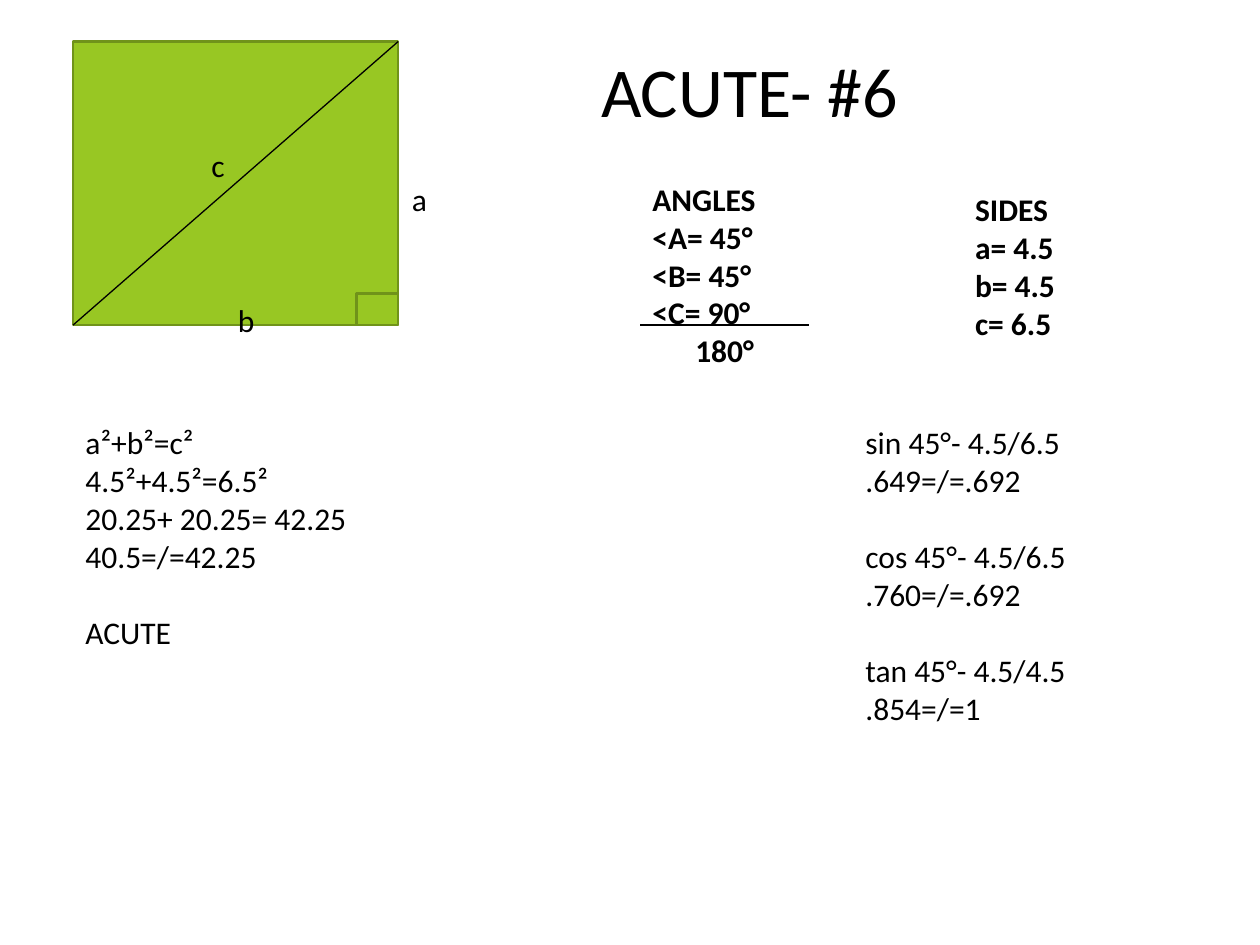
"""Build the slide that checks the triangle cut from a square in problem 6."""
from lxml.etree import SubElement
from pptx import Presentation
from pptx.dml.color import RGBColor
from pptx.enum.shapes import MSO_CONNECTOR as Connector, MSO_SHAPE as Preset
from pptx.enum.text import MSO_ANCHOR as Anchor, MSO_AUTO_SIZE as AutoSize, PP_ALIGN as Align
from pptx.oxml.ns import qn
from pptx.util import Inches, Pt


def color(value):
    return RGBColor.from_string(value)


class WorkSheet:
    font_name = "Calibri"
    ink = "000000"
    green = "98C723"
    dark_green = "70931A"
    body_size = 18
    title_size = 40

    def __init__(self, slide):
        self.slide = slide

    def style(self, paragraph, size, bold=False):
        paragraph.alignment = Align.LEFT
        paragraph.font.name = self.font_name
        paragraph.font.size = Pt(size)
        paragraph.font.bold = bold
        paragraph.font.color.rgb = color(self.ink)

    def title(self, wording, left, top, width, height):
        heading = self.slide.shapes.title
        heading.left, heading.top = Inches(left), Inches(top)
        heading.width, heading.height = Inches(width), Inches(height)
        frame = heading.text_frame
        frame.text = wording
        frame.auto_size = AutoSize.NONE
        frame.vertical_anchor = Anchor.TOP
        self.style(frame.paragraphs[0], self.title_size)

    def rectangle(self, left, top, width, height):
        figure = self.slide.shapes.add_shape(
            Preset.RECTANGLE, Inches(left), Inches(top), Inches(width), Inches(height))
        figure.shadow.inherit = False
        figure.fill.solid()
        figure.fill.fore_color.rgb = color(self.green)
        figure.line.color.rgb = color(self.dark_green)
        figure.line.width = Pt(1.25)

    def line(self, x1, y1, x2, y2):
        stroke = self.slide.shapes.add_connector(
            Connector.STRAIGHT, Inches(x1), Inches(y1), Inches(x2), Inches(y2))
        stroke.line.color.rgb = color(self.ink)
        stroke.line.width = Pt(0.75)
        SubElement(stroke._element.spPr, qn("a:effectLst"))

    def text(self, groups, left, top, width, height, bold=False):
        """Write groups of lines, one blank line's height apart, and return the paragraphs."""
        frame = self.slide.shapes.add_textbox(
            Inches(left), Inches(top), Inches(width), Inches(height)).text_frame
        frame.word_wrap = True
        lines = [(wording, index > 0 and position == 0)
                 for index, group in enumerate(groups)
                 for position, wording in enumerate(group)]
        for number, (wording, starts_group) in enumerate(lines):
            paragraph = frame.add_paragraph() if number else frame.paragraphs[0]
            paragraph.text = wording
            if starts_group:
                paragraph.space_before = Pt(22)
            self.style(paragraph, self.body_size, bold)
        return frame.paragraphs


def main():
    deck = Presentation()
    deck.slide_width, deck.slide_height = Inches(10), Inches(7.5)
    sheet = WorkSheet(deck.slides.add_slide(deck.slide_layouts[5]))

    left, top, width, height = 0.58, 0.33, 2.58, 2.25
    right, bottom = left + width, top + height
    corner_width, corner_height = 0.33, 0.25
    sheet.rectangle(left, top, width, height)
    sheet.line(left, bottom, right, top)
    sheet.rectangle(right - corner_width, bottom - corner_height, corner_width, corner_height)
    for side, x, y, label_width in (
            ("c", 1.58, 1.11, 0.42), ("a", 3.17, 1.38, 0.5), ("b", 1.79, 2.34, 0.62)):
        sheet.text([[side]], x, y, label_width, 0.4)

    sheet.title("ACUTE- #6", 4.67, 0.33, 4.17, 0.77)

    angles = sheet.text([["ANGLES", "<A= 45°", "<B= 45°", "<C= 90°", "180°"]],
                        5.08, 1.38, 1.33, 1.92, bold=True)
    angle_sum = angles[-1]
    angle_sum._p.get_or_add_pPr().set("marL", str(Inches(0.34)))
    sheet.line(5.08, bottom, 6.42, bottom)
    sheet.text([["SIDES", "a= 4.5", "b= 4.5", "c= 6.5"]], 7.64, 1.46, 1.17, 1.31, bold=True)

    work_top = 3.31
    sheet.text([["a²+b²=c²", "4.5²+4.5²=6.5²", "20.25+ 20.25= 42.25", "40.5=/=42.25"],
                ["ACUTE"]], left, work_top, 2.75, 1.92)
    sheet.text([["sin 45°- 4.5/6.5", ".649=/=.692"],
                ["cos 45°- 4.5/6.5", ".760=/=.692"],
                ["tan 45°- 4.5/4.5", ".854=/=1"]], 6.77, work_top, 2.92, 2.52)

    deck.save("out.pptx")


if __name__ == "__main__":
    main()
